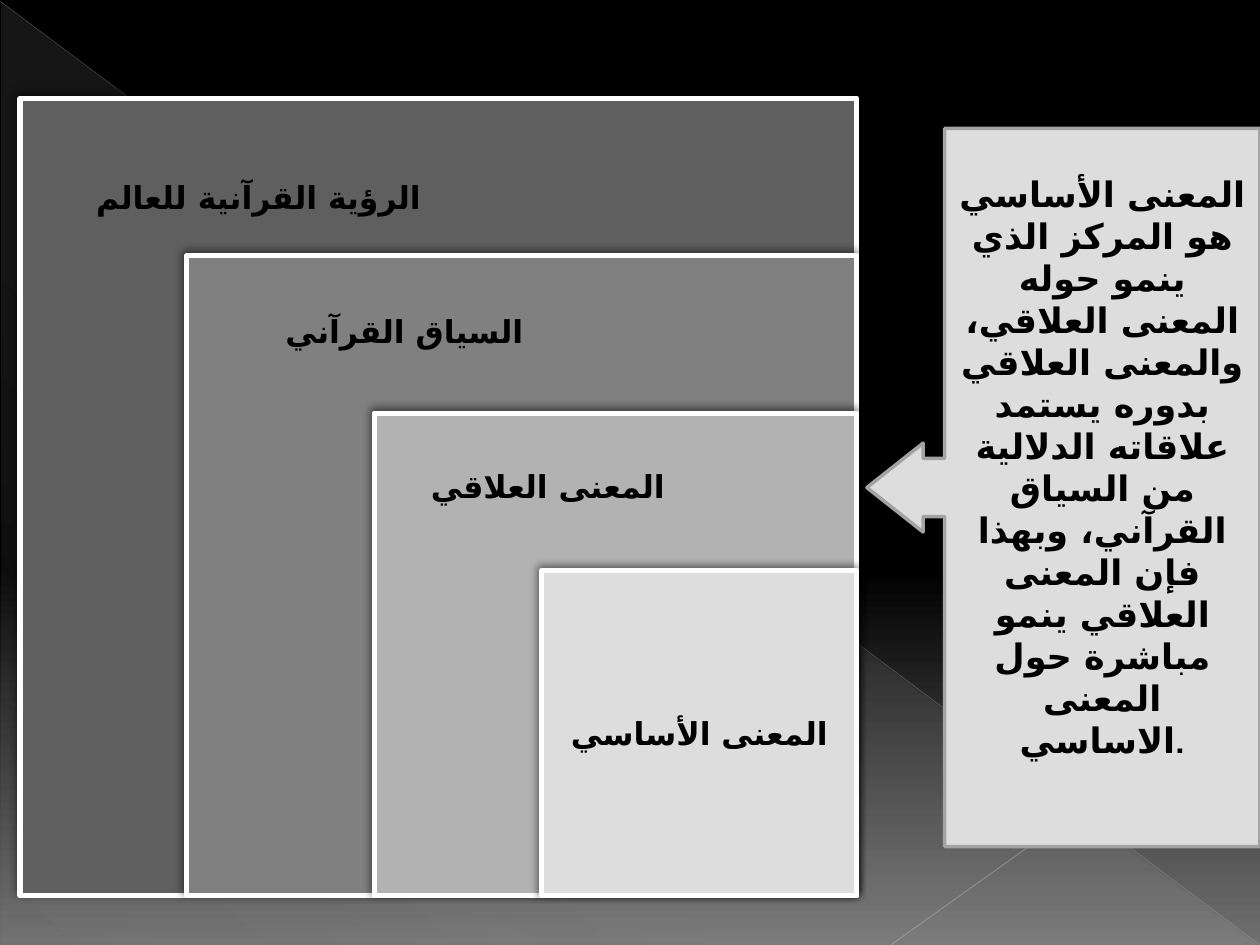
from dataclasses import dataclass

from lxml import etree
from pptx import Presentation
from pptx import util as u
from pptx.dml.color import RGBColor
from pptx.enum import shapes, text
from pptx.oxml import parse_xml
from pptx.oxml.ns import nsdecls, qn

COLUMNS, ROWS = 100, 75
CELL = u.Inches(0.1)


@dataclass(frozen=True)
class Theme:
    font: str = "TeX Gyre Adventor"
    arabic_font: str = "DejaVu Sans"
    ink: str = "000000"
    border: str = "FFFFFF"
    levels: tuple = ("5F5F5F", "808080", "B2B2B2", "DDDDDD")
    callout: str = "DDDDDD"
    callout_border: str = "A3A3A3"
    rays: tuple = ("B4B4B4", "BDBDBD")
    backdrop: tuple = ((0, "000000", 100), (60, "000000", 100), (100, "707070", 100))
    glow: tuple = ((0, "F8F8F8", 10), (70, "F8F8F8", 8), (100, "F8F8F8", 1))
    label_size: int = 18
    callout_size: int = 20
    leading: float = 1.2


THEME = Theme()

# Label, left column, top row, share of the width and top inset (rows) for the label
LEVELS = (
    ("الرؤية القرآنية للعالم", 1.6, 7.8, 0.57, 6.3),
    ("السياق القرآني", 14.8, 20.3, 0.65, 4.5),
    ("المعنى العلاقي", 29.7, 32.8, 0.72, 4.3),
    ("المعنى الأساسي", 43, 45.3, 1, None),
)
EXPLANATION = (
    "المعنى الأساسي هو المركز الذي ينمو حوله المعنى العلاقي، "
    "والمعنى العلاقي بدوره يستمد علاقاته الدلالية من السياق القرآني، "
    "وبهذا فإن المعنى العلاقي ينمو مباشرة حول المعنى الاساسي."
)


def grid(*cells):
    return [round(cell * CELL) for cell in cells]


def color_xml(color, alpha):
    return f'<a:srgbClr val="{color}"><a:alpha val="{alpha * 1000}"/></a:srgbClr>'


def set_gradient(fill, holder, stops, angle):
    """Replace the solid fill inside holder by a gradient of (percent, color, alpha) stops."""
    fill.solid()
    marks = "".join(f'<a:gs pos="{at * 1000}">{color_xml(color, alpha)}</a:gs>'
                    for at, color, alpha in stops)
    solid = holder.find(".//" + qn("a:solidFill"))
    solid.getparent().replace(solid, parse_xml(
        f'<a:gradFill {nsdecls("a")} rotWithShape="1"><a:gsLst>{marks}</a:gsLst>'
        f'<a:lin ang="{angle * 60000}" scaled="0"/></a:gradFill>'))


def add_panel(page, kind, box, fill, border, width):
    panel = page.shapes.add_shape(kind, *grid(*box))
    panel.shadow.inherit = False
    panel.fill.solid()
    panel.fill.fore_color.rgb = RGBColor.from_string(fill)
    panel.line.color.rgb = RGBColor.from_string(border)
    panel.line.width = u.Pt(width)
    return panel


def write(panel, words, size, rtl):
    frame = panel.text_frame
    frame.word_wrap = True
    frame.vertical_anchor = text.MSO_ANCHOR.MIDDLE
    frame.text = words
    para = frame.paragraphs[0]
    para.alignment = text.PP_ALIGN.CENTER
    para.line_spacing = u.Pt(size * THEME.leading)
    if rtl:
        para._p.get_or_add_pPr().set("rtl", "1")
    font = para.runs[0].font
    font.name, font.size, font.bold = THEME.font, u.Pt(size), True
    font.color.rgb = RGBColor.from_string(THEME.ink)
    etree.SubElement(font._element, qn("a:cs"), typeface=THEME.arabic_font)
    return frame


def add_ray(page, start, end, color, width, alpha):
    ray = page.shapes.add_connector(shapes.MSO_CONNECTOR.STRAIGHT, *grid(*start, *end))
    ray.line.color.rgb = RGBColor.from_string(color)
    ray.line.width = u.Pt(width)
    tint = ray.element.spPr.find(".//" + qn("a:srgbClr"))
    etree.SubElement(tint, qn("a:alpha"), val=str(alpha * 1000))
    etree.SubElement(ray.element.spPr, qn("a:effectLst"))


def draw_backdrop(page, width, height):
    set_gradient(page.background.fill, page.element, THEME.backdrop, 90)
    wedge = page.shapes.add_shape(shapes.MSO_SHAPE.RIGHT_TRIANGLE,
                                  *grid(0.1, 0.2, width - 0.2, height - 0.2))
    wedge.shadow.inherit = False
    wedge.line.fill.background()
    set_gradient(wedge.fill, wedge.element.spPr, THEME.glow, 133)
    add_ray(page, (0, 0.1), (width, height), THEME.rays[0], 0.39, 35)
    add_ray(page, (width, 54.1), (70.7, height), THEME.rays[1], 0.47, 45)


def add_soft_shadow(panel):
    effects = panel.element.spPr.find(qn("a:effectLst"))
    effects.append(parse_xml(
        f'<a:outerShdw {nsdecls("a")} blurRad="{u.Pt(5)}" dist="{u.Pt(2)}" '
        f'dir="{245 * 60000}" rotWithShape="0">{color_xml("000000", 50)}</a:outerShdw>'))


def draw_nested_levels(page, right, bottom):
    """Stack the levels so that all share the bottom right corner."""
    for (label, left, top, share, inset), fill in zip(LEVELS, THEME.levels):
        width = right - left
        panel = add_panel(page, shapes.MSO_SHAPE.RECTANGLE,
                          (left, top, width, bottom - top), fill, THEME.border, 3)
        add_soft_shadow(panel)
        frame = write(panel, label, THEME.label_size, rtl=True)
        frame.margin_left = 0
        frame.margin_right = grid(width * (1 - share))[0]
        if inset is not None:
            frame.vertical_anchor = text.MSO_ANCHOR.TOP
            frame.margin_top = grid(inset)[0]


def draw_explanation(page, box):
    callout = add_panel(page, shapes.MSO_SHAPE.LEFT_ARROW_CALLOUT, box,
                        THEME.callout, THEME.callout_border, 2)
    for index, value in enumerate((0.148, 0.113, 0.143, 0.802)):
        callout.adjustments[index] = value
    frame = write(callout, EXPLANATION, THEME.callout_size, rtl=False)
    frame.margin_bottom = grid(3.8)[0]


def main():
    deck = Presentation()
    deck.slide_width, deck.slide_height = grid(COLUMNS, ROWS)
    page = deck.slides.add_slide(deck.slide_layouts[6])
    draw_backdrop(page, COLUMNS, ROWS)
    draw_nested_levels(page, right=68, bottom=71.1)
    draw_explanation(page, (68.8, 10.2, 31.2, 57))
    deck.save("out.pptx")


if __name__ == "__main__":
    main()
